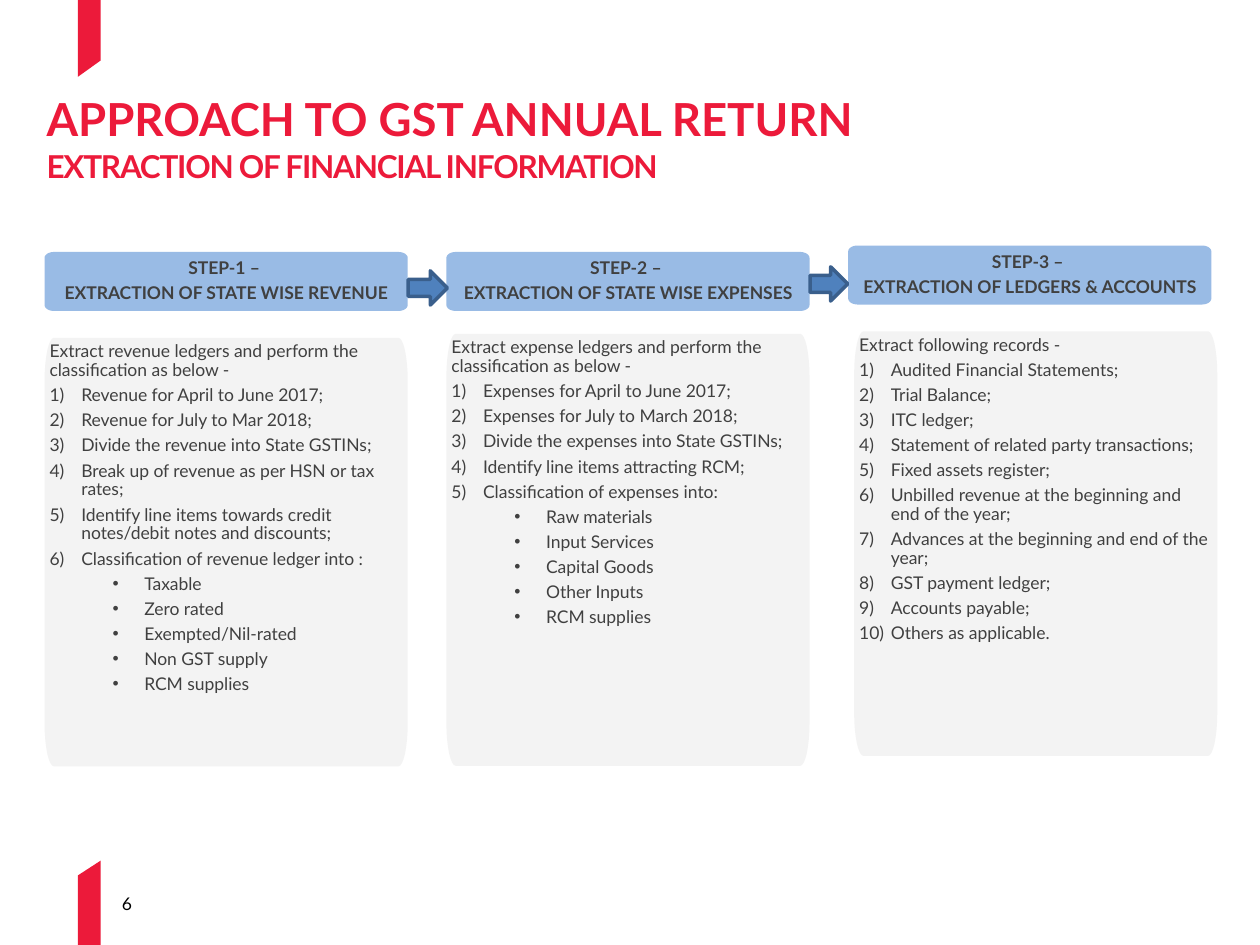
"""Build the GST annual return slide on extraction of financial information."""
import math

import lxml.etree
import pptx
import pptx.dml.color
import pptx.enum.shapes
import pptx.enum.text
import pptx.oxml.ns
import pptx.util

Cm = pptx.util.Cm
Pt = pptx.util.Pt
RGBColor = pptx.dml.color.RGBColor
qn = pptx.oxml.ns.qn

RED = RGBColor(0xEC, 0x1A, 0x3A)
HEADER_BLUE = RGBColor(0x8E, 0xB4, 0xE3)
ARROW_BLUE = RGBColor(0x4F, 0x81, 0xBD)
ARROW_EDGE = RGBColor(0x3A, 0x5F, 0x8C)
PALE_GREY = RGBColor(0xF2, 0xF2, 0xF2)
DARK_GREY = RGBColor(0x40, 0x40, 0x40)
BLACK = RGBColor(0, 0, 0)

FONT = "Lato"
CARD_WIDTH = 7.32
CORNER_WIDTH = 0.19
HEADER_LEFT, HEADER_STEP, HEADER_HEIGHT = 0.9, 8.1, 1.19

FLAGS = [
    [(2.03, 17.35), (1.57, 17.65), (1.57, 19.05), (2.03, 19.05)],
    [(2.03, 0), (1.57, 0), (1.57, 1.55), (2.03, 1.22)],
]
HEADERS = [
    (5.08, "STEP-1 – ", "EXTRACTION OF STATE WISE REVENUE"),
    (5.08, "STEP-2 – ", "EXTRACTION OF STATE WISE EXPENSES"),
    (4.95, "STEP-3 – ", "EXTRACTION OF LEDGERS & ACCOUNTS"),
]
CARDS = [
    (0.9, 6.81, 8.64,
     "Extract revenue ledgers and perform the classification as below -",
     ["Revenue for April to June 2017;",
      "Revenue for July to Mar 2018;",
      "Divide the revenue into State GSTINs;",
      "Break up of revenue as per HSN or tax rates;",
      "Identify line items towards credit notes/debit notes and discounts;",
      "Classification of revenue ledger into :"],
     ["Taxable", "Zero rated", "Exempted/Nil-rated", "Non GST supply", "RCM supplies"]),
    (9.0, 6.73, 8.71,
     "Extract expense ledgers and perform the classification as below -",
     ["Expenses for April to June 2017;",
      "Expenses for July to March 2018;",
      "Divide the expenses into State GSTINs;",
      "Identify line items attracting RCM;",
      "Classification of expenses into:"],
     ["Raw materials", "Input Services", "Capital Goods", "Other Inputs", "RCM supplies"]),
    (17.22, 6.68, 8.56,
     "Extract following records -",
     ["Audited Financial Statements;",
      "Trial Balance;",
      "ITC ledger;",
      "Statement of related party transactions;",
      "Fixed assets register;",
      "Unbilled revenue at the beginning and end of the year;",
      "Advances at the beginning and end of the year;",
      "GST payment ledger;",
      "Accounts payable;",
      "Others as applicable."],
     []),
]
ARROWS = [(8.23, 5.46, 0.79), (16.33, 5.38, 0.76)]


def add_outline(page, points, color):
    """Draw a closed filled outline through points given in centimetres."""
    corners = [(Cm(x), Cm(y)) for x, y in points]
    builder = page.shapes.build_freeform(*corners[0])
    builder.add_line_segments(corners[1:], close=True)
    shape = builder.convert_to_shape()
    shape.shadow.inherit = False
    shape.fill.solid()
    shape.fill.fore_color.rgb = color
    shape.line.fill.background()
    return shape


def card_points(left, top, height, corner_height):
    """Return the outline of a card with elliptical corners."""
    right, bottom = left + CARD_WIDTH, top + height
    centres = [
        (right - CORNER_WIDTH, bottom - corner_height),
        (left + CORNER_WIDTH, bottom - corner_height),
        (left + CORNER_WIDTH, top + corner_height),
        (right - CORNER_WIDTH, top + corner_height),
    ]
    points = []
    for quarter, (x, y) in enumerate(centres):
        for step in range(9):
            angle = math.radians(90 * quarter + 11.25 * step)
            points.append((x + CORNER_WIDTH * math.cos(angle),
                           y + corner_height * math.sin(angle)))
    return points


def add_card(page, left, top, height, corner_height, color, anchor):
    """Add a slightly transparent card ready for text."""
    card = add_outline(page, card_points(left, top, height, corner_height), color)
    rgb = card._element.spPr.find(qn("a:solidFill")).find(qn("a:srgbClr"))
    lxml.etree.SubElement(rgb, qn("a:alpha"), val="90000")
    set_frame(card.text_frame, Cm(0.1), anchor)
    return card


def set_frame(frame, margin, anchor):
    """Set wrapping, equal margins and the anchor of a text frame."""
    frame.word_wrap = True
    frame.margin_left = frame.margin_right = margin
    frame.margin_top = frame.margin_bottom = margin
    frame.vertical_anchor = anchor


def format_runs(para, size, color, bold=False, spacing=0):
    """Format every run of a paragraph; spacing is in points."""
    for span in para.runs:
        span.font.name = FONT
        span.font.size = Pt(size)
        span.font.bold = bold
        span.font.color.rgb = color
        if spacing:
            span._r.get_or_add_rPr().set("spc", str(round(spacing * 100)))


def format_card_paragraph(para, alignment, bold=False):
    """Apply the spacing and type shared by all card paragraphs."""
    para.alignment = alignment
    para.line_spacing = 0.9
    para.space_after = Pt(3.5)
    format_runs(para, 10, DARK_GREY, bold)


def add_list_item(frame, text, level):
    """Append a numbered item at level 0 or a bulleted one at level 1."""
    para = frame.add_paragraph()
    para.text = text
    para.level = level
    properties = para._p.get_or_add_pPr()
    properties.set("marL", str(Cm(0.64 + 1.27 * level)))
    properties.set("indent", str(-Cm(0.64)))
    if level:
        lxml.etree.SubElement(properties, qn("a:buFont"), typeface="Arial")
        lxml.etree.SubElement(properties, qn("a:buChar"), char="•")
    else:
        lxml.etree.SubElement(properties, qn("a:buAutoNum"), type="arabicParenR")
    format_card_paragraph(para, pptx.enum.text.PP_ALIGN.LEFT)


def add_header(page, left, top, step, title):
    """Add a blue step header."""
    card = add_card(page, left, top, HEADER_HEIGHT, 0.12, HEADER_BLUE,
                    pptx.enum.text.MSO_ANCHOR.MIDDLE)
    card.text_frame.text = f"{step}\n{title}"
    for para in card.text_frame.paragraphs:
        format_card_paragraph(para, pptx.enum.text.PP_ALIGN.CENTER, bold=True)


def add_details(page, left, top, height, intro, steps, classes):
    """Add a grey card with an introduction, numbered steps and bullets."""
    card = add_card(page, left, top, height, 0.86, PALE_GREY,
                    pptx.enum.text.MSO_ANCHOR.TOP)
    frame = card.text_frame
    frame.text = intro
    format_card_paragraph(frame.paragraphs[0], pptx.enum.text.PP_ALIGN.LEFT)
    for level, items in enumerate((steps, classes)):
        for item in items:
            add_list_item(frame, item, level)


def add_arrow(page, left, top, width):
    """Add a block arrow between two headers."""
    arrow = page.shapes.add_shape(pptx.enum.shapes.MSO_SHAPE.RIGHT_ARROW,
                                  Cm(left), Cm(top), Cm(width), Cm(0.69))
    arrow.shadow.inherit = False
    arrow.fill.solid()
    arrow.fill.fore_color.rgb = ARROW_BLUE
    arrow.line.color.rgb = ARROW_EDGE
    arrow.line.width = Pt(2)


def add_text(page, left, top, width, height, text):
    """Add a text box without margins and return its paragraphs."""
    box = page.shapes.add_textbox(Cm(left), Cm(top), Cm(width), Cm(height))
    set_frame(box.text_frame, 0, pptx.enum.text.MSO_ANCHOR.TOP)
    box.text_frame.text = text
    return box.text_frame.paragraphs


def main():
    """Build and save the slide."""
    deck = pptx.Presentation()
    deck.slide_width, deck.slide_height = Cm(25.4), Cm(19.05)
    page = deck.slides.add_slide(deck.slide_layouts[6])
    for points in FLAGS:
        add_outline(page, points, RED)
    for column, (top, step, title) in enumerate(HEADERS):
        add_header(page, HEADER_LEFT + HEADER_STEP * column, top, step, title)
    for card in CARDS:
        add_details(page, *card)
    number, = add_text(page, 2.46, 18.01, 1.05, 0.43, "6")
    format_runs(number, 10, BLACK)
    title, subtitle = add_text(
        page, 0.94, 1.83, 23.04, 1.96,
        "APPROACH TO GST ANNUAL RETURN\nEXTRACTION OF FINANCIAL INFORMATION")
    format_runs(title, 26, RED, bold=True)
    format_runs(subtitle, 18, RED, bold=True, spacing=-0.7)
    subtitle.space_before = Pt(1.1)
    for arrow in ARROWS:
        add_arrow(page, *arrow)
    deck.save("out.pptx")


if __name__ == "__main__":
    main()
